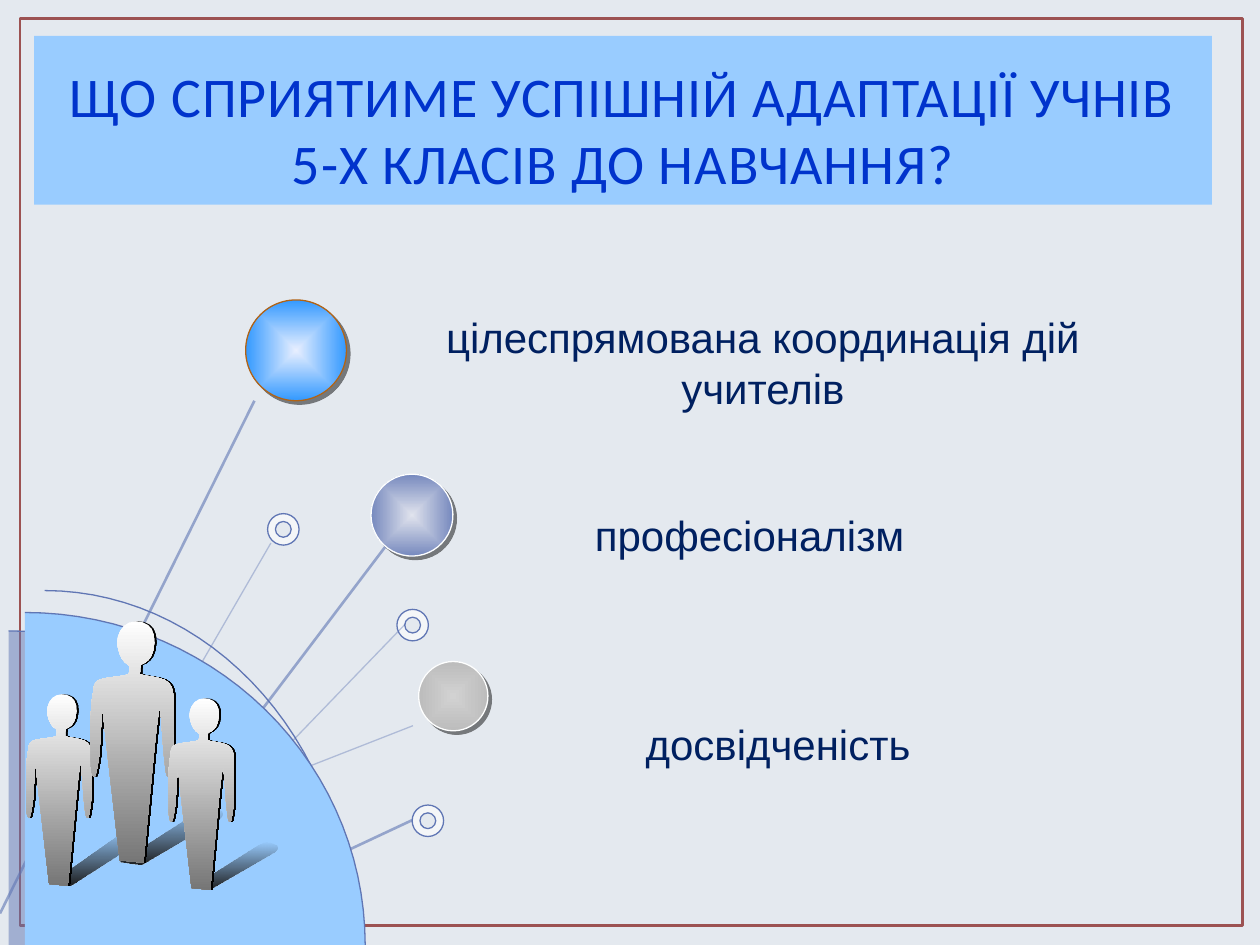
import math

import pptx
import pptx.dml.color
import pptx.enum.shapes
import pptx.enum.text
import pptx.oxml.ns
import pptx.util
from lxml import etree

Pt = pptx.util.Pt
SHAPES = pptx.enum.shapes.MSO_SHAPE
ACCENT, SKY, NAVY = "6076B4", "99CCFF", "002060"

# Outlines in percent of their box: a pair is a corner, six numbers a curve
PERSON = [
    (46, 18), (39, 17, 34, 13, 33, 9), (33, 5, 40, 0, 55, 0), (69, 0, 78, 3, 77, 9),
    (76, 15, 69, 17, 61, 18), (60, 19, 60, 21, 60, 22), (69, 23, 88, 23, 94, 25.5),
    (101, 28, 99, 31, 100, 36), (99, 56.5), (97, 61, 95.5, 65, 94, 64.5),
    (90, 65, 90, 59, 88, 54.5), (84, 35.5), (82, 36, 79, 46, 76, 56.5), (64, 100),
    (36, 99), (22, 57), (18, 45, 16.5, 37, 15, 36.5), (12, 54.5),
    (10.5, 59, 7.5, 64.5, 6, 64.5), (1.5, 64.5, 1.5, 59, 1.5, 54),
    (0, 49, 1.5, 37, 3, 32.5), (6, 28, 3, 26.5, 10, 24.5), (18, 23, 40, 23, 46, 22),
    (48, 21, 49, 19, 46, 18),
]
CAST_SHADOW = [(0, 94), (20, 100), (90, 22), (100, 6, 86, 2, 82, 1), (78, 0, 76, 1, 64, 16)]


def color(value):
    return pptx.dml.color.RGBColor.from_string(value)


def add_element(parent, tag, **values):
    attributes = {name: str(value) for name, value in values.items()}
    return etree.SubElement(parent, pptx.oxml.ns.qn(tag), attributes)


def find(shape, tag):
    return next(shape._element.iter(pptx.oxml.ns.qn(tag)))


def apply_format(target, values):
    for name, value in values.items():
        setattr(target, name, value)


def style(shape, fill=None, line=None, width=0.75, opacity=100):
    shape.shadow.inherit = False
    if fill:
        shape.fill.solid()
        shape.fill.fore_color.rgb = color(fill)
        if opacity < 100:
            add_element(find(shape, "a:srgbClr"), "a:alpha", val=opacity * 1000)
    else:
        shape.fill.background()
    if line:
        shape.line.color.rgb = color(line)
        shape.line.width = Pt(width)
    else:
        shape.line.fill.background()


def set_gradient(shape, first, last, radial=False, first_opacity=100):
    shape.fill.gradient()
    gradient = find(shape, "a:gradFill")
    for child in list(gradient):
        gradient.remove(child)
    stops = add_element(gradient, "a:gsLst")
    for position, value, opacity in ((0, first, first_opacity), (100000, last, 100)):
        stop = add_element(add_element(stops, "a:gs", pos=position), "a:srgbClr", val=value)
        if opacity < 100:
            add_element(stop, "a:alpha", val=opacity * 1000)
    if radial:
        focus = add_element(gradient, "a:path", path="shape")
        add_element(focus, "a:fillToRect", l=50000, t=50000, r=50000, b=50000)
    else:
        add_element(gradient, "a:lin", ang=5400000, scaled=0)


def set_shadow(shape, value, opacity, distance, angle):
    shadow = add_element(find(shape, "a:effectLst"), "a:outerShdw", blurRad=0,
                         dist=Pt(distance), dir=angle * 60000, algn="ctr", rotWithShape=0)
    add_element(add_element(shadow, "a:srgbClr", val=value), "a:alpha", val=opacity * 1000)


def add_preset(slide, kind, box, **look):
    shape = slide.shapes.add_shape(kind, *map(Pt, box))
    style(shape, **look)
    return shape


def add_outline(slide, points, close=True, **look):
    points = [(Pt(x), Pt(y)) for x, y in points]
    builder = slide.shapes.build_freeform(*points[0], scale=1.0)
    builder.add_line_segments(points[1:], close=close)
    shape = builder.convert_to_shape()
    style(shape, **look)
    return shape


def add_curved_outline(slide, outline, box):
    left, top, width, height = box
    points = []
    for step in outline:
        if len(step) == 2:
            points.append(step)
            continue
        controls = [points[-1], step[:2], step[2:4], step[4:]]
        for t in (0.2, 0.4, 0.6, 0.8, 1):
            weights = [math.comb(3, i) * t**i * (1 - t) ** (3 - i) for i in range(4)]
            points.append(tuple(sum(w * c[axis] for w, c in zip(weights, controls))
                                for axis in (0, 1)))
    return add_outline(slide, [(left + x * width / 100, top + y * height / 100)
                               for x, y in points])


def add_quarter(slide, box, fill=None, opacity=100):
    left, top, width, height = box
    bottom = top + height
    angles = [math.radians(3 * step) for step in range(31)]
    arc = [(left + width * math.sin(a), bottom - height * math.cos(a)) for a in angles]
    if fill:
        add_outline(slide, arc + [(left, bottom)], fill=fill, opacity=opacity)
    add_outline(slide, arc, close=False, line=ACCENT)


def add_ray(slide, start, end, width, opacity):
    ray = slide.shapes.add_connector(pptx.enum.shapes.MSO_CONNECTOR.STRAIGHT,
                                     *map(Pt, start + end))
    ray.line.color.rgb = color(ACCENT)
    ray.line.width = Pt(width)
    add_element(find(ray, "a:srgbClr"), "a:alpha", val=opacity * 1000)
    add_element(find(ray, "p:spPr"), "a:effectLst")


def add_ball(slide, box, center, edge, line, rotation):
    ball = add_preset(slide, SHAPES.OVAL, box, line=line)
    ball.rotation = rotation
    set_gradient(ball, center, edge, radial=True)
    set_shadow(ball, "080808", 50, 2.8, 45)


def write_text(shape, text, frame_format, font_format, value, line_spacing=None):
    frame = shape.text_frame
    apply_format(frame, {"word_wrap": True, **frame_format})
    paragraph = frame.paragraphs[0]
    apply_format(paragraph, {"alignment": pptx.enum.text.PP_ALIGN.CENTER,
                             "line_spacing": line_spacing})
    run = paragraph.add_run()
    run.text = text
    apply_format(run.font, font_format)
    run.font.color.rgb = color(value)
    return run


def add_label(slide, text, box):
    write_text(slide.shapes.add_textbox(*map(Pt, box)), text,
               {"margin_top": Pt(32.5)}, {"name": "Arial", "size": Pt(24)}, NAVY, Pt(29))


def add_title(slide, text):
    banner = add_preset(slide, SHAPES.RECTANGLE, (19.5, 20.5, 673, 96.5), fill=SKY)
    margins = {"margin_left": Pt(9.5), "margin_right": Pt(9.5),
               "margin_top": Pt(5), "margin_bottom": Pt(5),
               "vertical_anchor": pptx.enum.text.MSO_ANCHOR.BOTTOM}
    run = write_text(banner, text, margins, {"name": "Calibri", "size": Pt(32)}, "0033CC")
    run.font._element.set("spc", "50")


def main():
    presentation = pptx.Presentation()
    apply_format(presentation, {"slide_width": Pt(720), "slide_height": Pt(540)})
    slide = presentation.slides.add_slide(presentation.slide_layouts[6])
    slide.background.fill.solid()
    slide.background.fill.fore_color.rgb = color("E4E9EF")
    add_preset(slide, SHAPES.RECTANGLE, (11.5, 10.5, 698.5, 518.5), line="9C5252", width=1.5)

    # Quarter discs, rings and rays of the fan
    add_quarter(slide, (25.5, 337.5, 176.5, 202.5))
    for left, top in ((152.9, 293.5), (226.8, 348.2), (235.5, 460)):
        add_preset(slide, SHAPES.DONUT, (left, top, 18, 18),
                   fill="FFFFFF", opacity=60, line=ACCENT)
    for start, end in (((154.8, 310.3), (24, 536.5)), ((236, 414.7), (23, 498))):
        add_ray(slide, start, end, 0.75, 40)
    for start, end in (((145.4, 229), (0, 522)), ((221.8, 310.3), (39.6, 551)),
                       ((235.5, 468.7), (0, 579))):
        add_ray(slide, start, end, 1.5, 60)
    add_quarter(slide, (5, 360.5, 197.5, 198), ACCENT, 50)
    add_ray(slide, (231.8, 356.4), (32.4, 563), 0.75, 40)
    add_quarter(slide, (14.2, 350, 194.5, 190), SKY)

    # Labels and their balls
    add_label(slide, "цілеспрямована координація дій учителів", (224, 145.4, 424, 94.3))
    add_label(slide, "професіоналізм ", (265, 258.5, 333.4, 65.5))
    add_label(slide, "досвідченість", (291.6, 378, 306, 65.5))
    add_ball(slide, (140.4, 171.4, 57.6, 57.6), "E8EFFF", "3399FF", "B26314", 0)
    add_ball(slide, (212, 271, 46.8, 46.8), "E0E3ED", ACCENT, "FEFFFF", 13.4)
    add_ball(slide, (239.2, 378, 39.6, 39.6), "D2D2D2", "B2B2B2", "FEFFFF", 51.9)
    add_title(slide, "ЩО СПРИЯТИМЕ УСПІШНІЙ АДАПТАЦІЇ УЧНІВ 5-Х КЛАСІВ ДО НАВЧАННЯ?")

    # Three people, on top of the shadows they cast
    for box in ((28.8, 473, 57.6, 33), (68.4, 461, 63, 33), (109.5, 481, 52.5, 27.5)):
        set_gradient(add_curved_outline(slide, CAST_SHADOW, box),
                     "181818", "1C1C1C", first_opacity=0)
    for box in ((14.4, 396.7, 38, 109.5), (51.1, 355, 48.2, 138), (95.8, 399, 38, 109.5)):
        person = add_curved_outline(slide, PERSON, box)
        set_gradient(person, "FFFFFF", "767676")
        set_shadow(person, "000000", 100, 1.2, 0)

    presentation.save("out.pptx")


if __name__ == "__main__":
    main()
